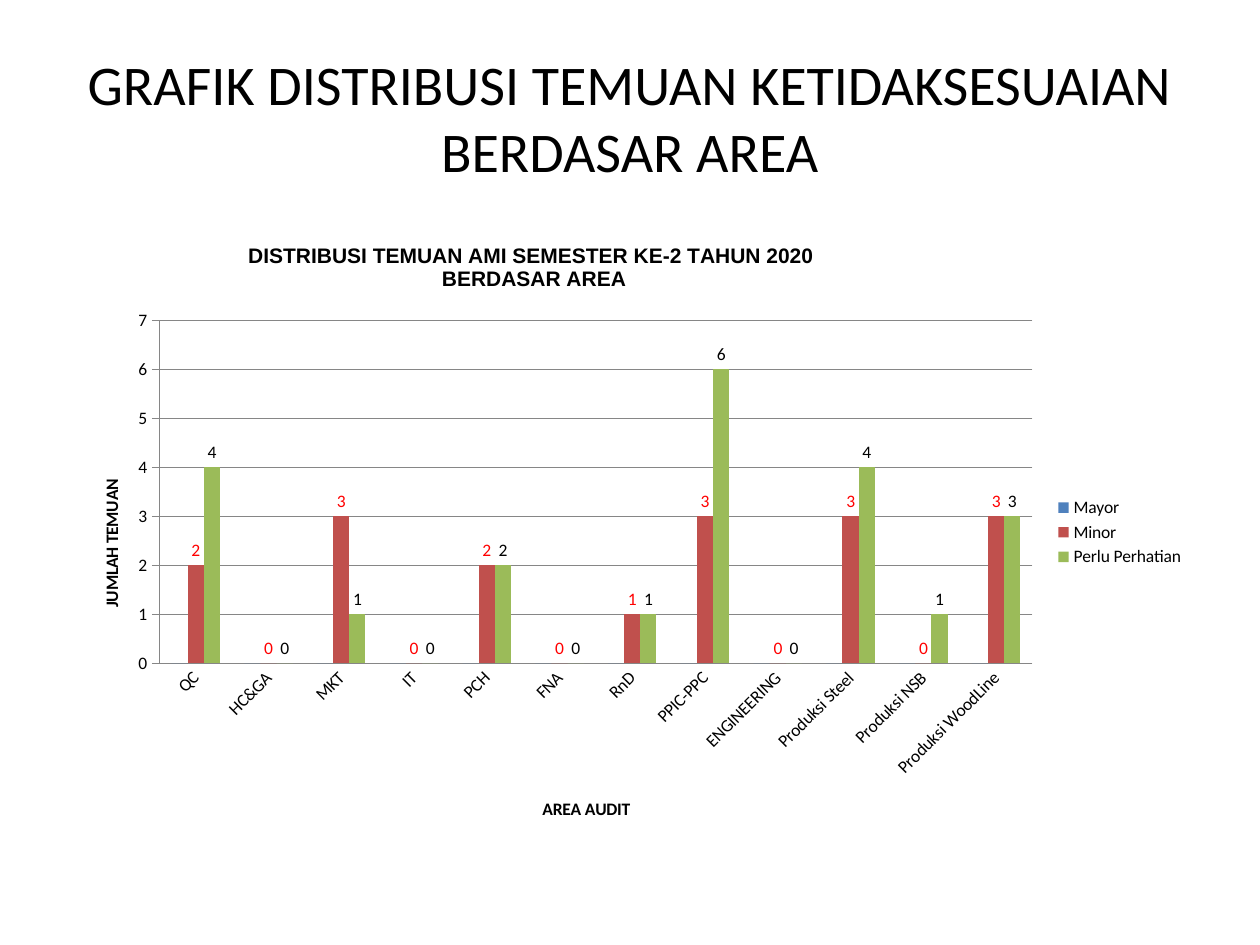
from lxml import etree
from pptx import Presentation
from pptx.chart.data import CategoryChartData
from pptx.dml.color import RGBColor
from pptx.enum.chart import (XL_CHART_TYPE, XL_LABEL_POSITION,
                             XL_LEGEND_POSITION, XL_TICK_MARK)
from pptx.enum.text import MSO_ANCHOR, PP_ALIGN
from pptx.oxml.ns import qn
from pptx.util import Pt

COLUMN = XL_CHART_TYPE.COLUMN_CLUSTERED
OUTSIDE = XL_LABEL_POSITION.OUTSIDE_END
RIGHT = XL_LEGEND_POSITION.RIGHT
CROSS, NONE = XL_TICK_MARK.CROSS, XL_TICK_MARK.NONE
MIDDLE, CENTER = MSO_ANCHOR.MIDDLE, PP_ALIGN.CENTER

BLACK = RGBColor(0, 0, 0)
WHITE = RGBColor(255, 255, 255)
RED = RGBColor(255, 0, 0)
GRAY = RGBColor(0x86, 0x86, 0x86)
BLUE = RGBColor(0x4F, 0x81, 0xBD)
BRICK = RGBColor(0xC0, 0x50, 0x4D)
GREEN = RGBColor(0x9B, 0xBB, 0x59)

AREAS = ["QC", "HC&GA", "MKT", "IT", "PCH", "FNA", "RnD", "PPIC-PPC",
         "ENGINEERING", "Produksi Steel", "Produksi NSB", "Produksi WoodLine"]
# name, values, bar colour, label colour
FINDINGS = [
    ("Mayor", [0] * len(AREAS), BLUE, None),
    ("Minor", [2, 0, 3, 0, 2, 0, 1, 3, 0, 3, 0, 3], BRICK, RED),
    ("Perlu Perhatian", [4, 0, 1, 0, 2, 0, 1, 6, 0, 4, 1, 3], GREEN, BLACK),
]


def style(font, size, color=BLACK, name="Calibri", bold=False):
    font.size, font.name, font.bold = Pt(size), name, bold
    font.color.rgb = color


def place(part, index, **spot):
    """Give a chart part a manual layout, in fractions of the chart."""
    for old in part.findall(qn("c:layout")):
        part.remove(old)
    layout = etree.Element(qn("c:layout"))
    manual = etree.SubElement(layout, qn("c:manualLayout"))
    if "w" in spot:
        etree.SubElement(manual, qn("c:layoutTarget"), val="inner")
    for side in "xy":
        etree.SubElement(manual, qn(f"c:{side}Mode"), val="edge")
    for key, value in spot.items():
        etree.SubElement(manual, qn(f"c:{key}"), val=str(value))
    part.insert(index, layout)


def add_heading(slide, text):
    box = slide.shapes.add_textbox(Pt(36), Pt(21.6), Pt(648), Pt(90))
    frame = box.text_frame
    frame.word_wrap = True
    frame.vertical_anchor = MIDDLE
    frame.text = text
    line = frame.paragraphs[0]
    line.alignment = CENTER
    style(line.runs[0].font, 32)


def set_title(title, lines, size, name, x, y):
    frame = title.text_frame
    frame.text = "\n".join(lines)
    for line in frame.paragraphs:
        for run in line.runs:
            style(run.font, size, name=name, bold=True)
    place(title._element, 1, x=x, y=y)


def set_axis(axis, title, tick, x, y):
    axis.major_tick_mark, axis.minor_tick_mark = tick, NONE
    style(axis.tick_labels.font, 10)
    axis.format.line.color.rgb = GRAY
    axis.format.line.width = Pt(0.75)
    set_title(axis.axis_title, [title], 10, "Calibri", x, y)


def set_series(series, fill, label):
    series.format.fill.solid()
    series.format.fill.fore_color.rgb = fill
    series.invert_if_negative = False
    if label is not None:
        labels = series.data_labels
        labels.show_value = True
        labels.position = OUTSIDE
        style(labels.font, 10, label)


def fill_plot(plot):
    """Put a white fill behind the bars."""
    props = etree.SubElement(plot, qn("c:spPr"))
    fill = etree.SubElement(props, qn("a:solidFill"))
    etree.SubElement(fill, qn("a:srgbClr"), val=str(WHITE))


def add_findings(slide):
    data = CategoryChartData(number_format="General")
    data.categories = AREAS
    for name, values, _, _ in FINDINGS:
        data.add_series(name, values)
    chart = slide.shapes.add_chart(
        COLUMN, Pt(36), Pt(126), Pt(648), Pt(356.4), data).chart
    style(chart.font, 10)
    set_title(chart.chart_title,
              ["DISTRIBUSI TEMUAN AMI SEMESTER KE-2 TAHUN 2020 ",
               "BERDASAR AREA"], 12, "Arial", 0.16, 0.03)

    plot = chart.plots[0]
    plot.gap_width, plot.overlap = 150, 0
    plot.vary_by_categories = False
    for series, (_, _, fill, label) in zip(plot.series, FINDINGS):
        set_series(series, fill, label)

    areas, counts = chart.category_axis, chart.value_axis
    set_axis(areas, "AREA AUDIT", NONE, 0.42, 0.92)
    set_axis(counts, "JUMLAH TEMUAN", CROSS, 0.03, 0.41)
    turn = areas._element.find(qn("c:txPr")).find(qn("a:bodyPr"))
    turn.set("rot", "-2700000")
    turn.set("vert", "horz")
    counts.minimum_scale, counts.maximum_scale = 0, 7
    counts.major_unit = 1
    counts.has_major_gridlines = True
    grid = counts.major_gridlines.format.line
    grid.color.rgb, grid.width = GRAY, Pt(0.75)

    chart.has_legend = True
    chart.legend.position = RIGHT
    chart.legend.include_in_layout = False
    style(chart.legend.font, 10)

    area = chart._chartSpace.chart.plotArea
    place(area, 0, x=0.085, y=0.16, w=0.77, h=0.55)
    fill_plot(area)


def main():
    deck = Presentation()
    deck.slide_width, deck.slide_height = Pt(720), Pt(540)
    slide = deck.slides.add_slide(deck.slide_layouts[6])
    add_heading(slide,
                "GRAFIK DISTRIBUSI TEMUAN KETIDAKSESUAIAN BERDASAR AREA")
    add_findings(slide)
    deck.save("out.pptx")


if __name__ == "__main__":
    main()
